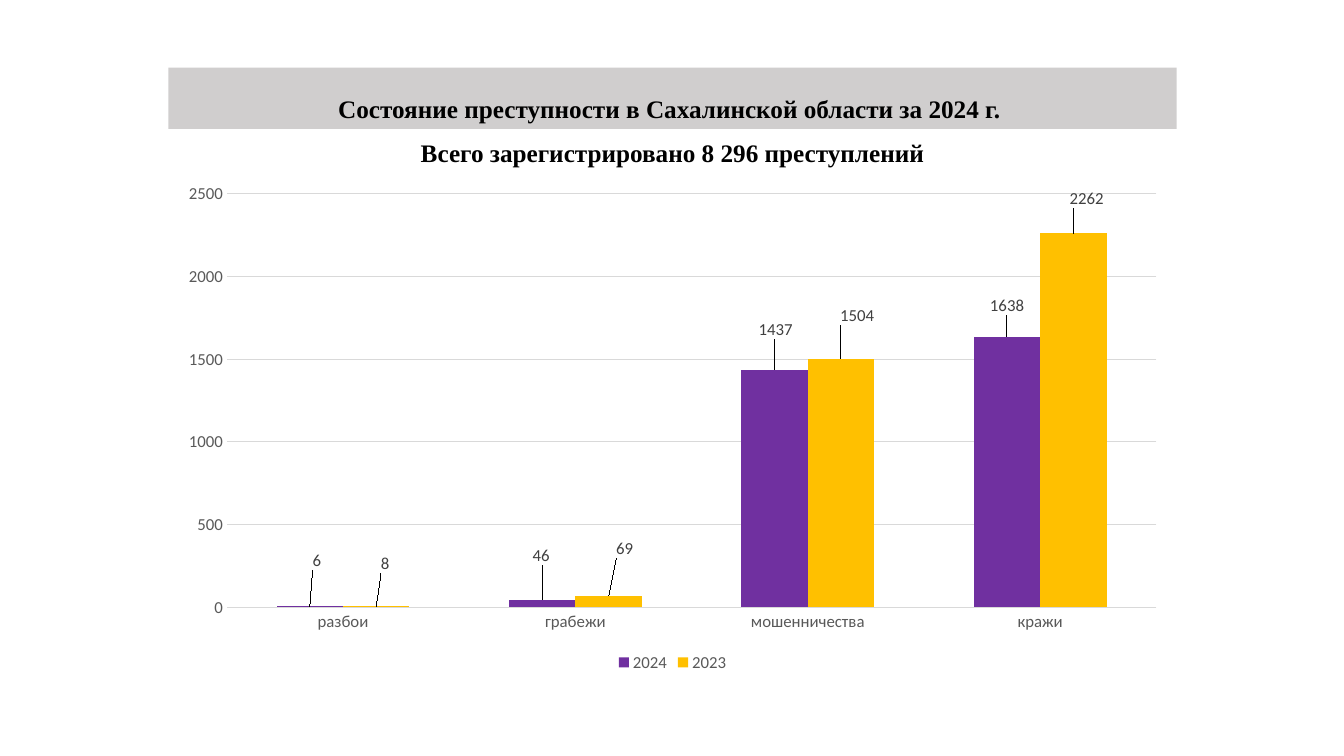
from lxml import etree
from pptx import Presentation
from pptx.chart.data import CategoryChartData
from pptx.dml.color import RGBColor
from pptx.enum.chart import XL_CHART_TYPE, XL_LABEL_POSITION, XL_LEGEND_POSITION, XL_TICK_MARK
from pptx.enum.shapes import MSO_SHAPE
from pptx.enum.text import MSO_ANCHOR, PP_ALIGN
from pptx.oxml.ns import qn
from pptx.util import Inches, Pt

COLUMNS = XL_CHART_TYPE.COLUMN_CLUSTERED
OUTSIDE = XL_LABEL_POSITION.OUTSIDE_END
LEGEND_BOTTOM = XL_LEGEND_POSITION.BOTTOM
NO_TICK = XL_TICK_MARK.NONE
RECT = MSO_SHAPE.RECTANGLE
TOP, BOTTOM = MSO_ANCHOR.TOP, MSO_ANCHOR.BOTTOM
CENTER = PP_ALIGN.CENTER

LEFT, WIDTH = 1.67, 10
CATEGORIES = ["разбои", "грабежи", "мошенничества", "кражи"]
SERIES = [
    ("2024", [6, 46, 1437, 1638], "7030A0",
     [(0.7, -6.4), (-0.1, -6), (0.1, -5.2), (0, -3.4)]),
    ("2023", [8, 69, 1504, 2262], "FFC000",
     [(0.9, -5.6), (1.6, -6.6), (1.6, -5.8), (1.3, -4.2)]),
]


def rgb(value):
    return RGBColor.from_string(value)


def set_font(font, name="Calibri", size=12, color="595959", bold=False):
    font.name = name
    font.size = Pt(size)
    font.bold = bold
    font.color.rgb = rgb(color)


def write(sp, text, anchor=TOP, spacing=1.0, before=0, **style):
    tf = sp.text_frame
    tf.word_wrap = True
    tf.vertical_anchor = anchor
    p = tf.paragraphs[0]
    p.alignment = CENTER
    p.line_spacing = spacing
    p.space_before = Pt(before)
    r = p.add_run()
    r.text = text
    set_font(r.font, **style)


def manual_layout(**values):
    layout = etree.Element(qn("c:layout"))
    manual = etree.SubElement(layout, qn("c:manualLayout"))
    for tag, value in values.items():
        etree.SubElement(manual, qn(f"c:{tag}")).set("val", str(value))
    return layout


class SlideBuilder:
    heading = {"name": "Times New Roman", "size": 18, "color": "000000", "bold": True}

    def __init__(self, slide):
        self.s = slide

    def banner(self, text, top, height, fill):
        sp = self.s.shapes.add_shape(
            RECT, Inches(LEFT), Inches(top), Inches(WIDTH), Inches(height))
        sp.shadow.inherit = False
        sp.fill.solid()
        sp.fill.fore_color.rgb = rgb(fill)
        sp.line.fill.background()
        write(sp, text, anchor=BOTTOM, spacing=0.9, **self.heading)

    def subtitle(self, text, top, height):
        sp = self.s.shapes.add_textbox(
            Inches(LEFT), Inches(top), Inches(WIDTH), Inches(height))
        write(sp, text, spacing=0.8, before=10, **self.heading)

    def column_chart(self, top, height):
        data = CategoryChartData()
        data.categories = CATEGORIES
        for name, values, _, _ in SERIES:
            data.add_series(name, values)
        chart = self.s.shapes.add_chart(
            COLUMNS, Inches(LEFT), Inches(top), Inches(WIDTH), Inches(height), data).chart
        set_font(chart.font, size=10, color="000000")
        chart.has_title = False
        chart.has_legend = True
        chart.legend.position = LEGEND_BOTTOM
        chart.legend.include_in_layout = False
        set_font(chart.legend.font)
        self.axes(chart)
        plot = chart.plots[0]
        plot.gap_width = 150
        plot.overlap = 0
        plot.vary_by_categories = False
        for series, (_, _, color, offsets) in zip(plot.series, SERIES):
            series.format.fill.solid()
            series.format.fill.fore_color.rgb = rgb(color)
            self.labels(series, offsets)
        area = chart._chartSpace.chart.plotArea
        for old in area.findall(qn("c:layout")):
            area.remove(old)
        area.insert(0, manual_layout(
            layoutTarget="inner", xMode="edge", yMode="edge",
            x=0.058, y=0.041, w=0.922, h=0.822))

    def axes(self, chart):
        for axis in (chart.category_axis, chart.value_axis):
            axis.major_tick_mark = NO_TICK
            axis.minor_tick_mark = NO_TICK
            axis.format.line.fill.background()
            set_font(axis.tick_labels.font)
        axis = chart.value_axis
        axis.minimum_scale, axis.maximum_scale, axis.major_unit = 0, 2500, 500
        axis.has_major_gridlines = True
        grid = axis.major_gridlines.format.line
        grid.color.rgb = rgb("D9D9D9")
        grid.width = Pt(0.75)

    def labels(self, series, offsets):
        labels = series.data_labels
        labels.show_value = True
        labels.position = OUTSIDE
        set_font(labels.font, color="404040")
        for i in range(len(offsets)):
            label = series.points[i].data_label
            set_font(label.font, color="404040")
            label.position = OUTSIDE
        for node, (dx, dy) in zip(series._element.iter(qn("c:dLbl")), offsets):
            node[0].addnext(manual_layout(x=dx / 100, y=dy / 100))


def main():
    prs = Presentation()
    prs.slide_width, prs.slide_height = Inches(13.33), Inches(7.5)
    builder = SlideBuilder(prs.slides.add_slide(prs.slide_layouts[6]))
    builder.banner("Состояние преступности в Сахалинской области за 2024 г. ",
                   0.67, 0.61, "D0CECE")
    builder.subtitle("Всего зарегистрировано 8 296 преступлений", 1.37, 0.36)
    builder.column_chart(1.72, 4.99)
    prs.save("out.pptx")


if __name__ == "__main__":
    main()
